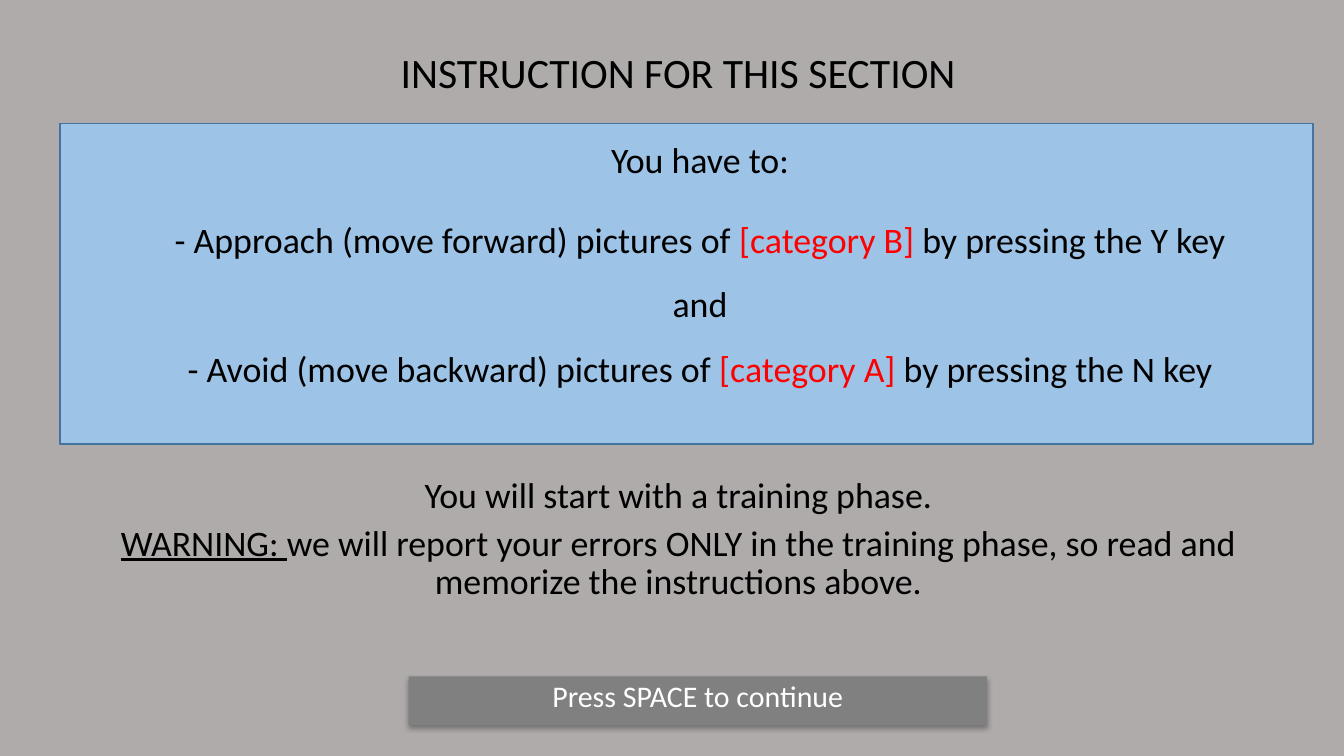
from lxml.etree import SubElement
from pptx import Presentation
from pptx.dml.color import RGBColor
from pptx.enum.shapes import MSO_SHAPE
from pptx.enum.text import MSO_ANCHOR, PP_ALIGN
from pptx.oxml.ns import qn
from pptx.util import Inches, Pt

BLACK = RGBColor(0x00, 0x00, 0x00)
WHITE = RGBColor(0xFF, 0xFF, 0xFF)
RED = RGBColor(0xFF, 0x00, 0x00)
BACKGROUND = RGBColor(0xAF, 0xAB, 0xAB)
PANEL = RGBColor(0x9D, 0xC3, 0xE6)
PANEL_LINE = RGBColor(0x43, 0x73, 0x9E)
BUTTON = RGBColor(0x80, 0x80, 0x80)

HEADING = {"line_spacing": 0.9, "space_before": Pt(9.4)}
RULES = {"line_spacing": 1.5, "space_before": Pt(9.4)}
NOTE = {"line_spacing": 0.9, "space_after": Pt(6)}


def set_format(target, values):
    for name, value in values.items():
        setattr(target, name, value)


def add_run(p, text, size, color, underline=None):
    r = p.add_run()
    r.text = text
    set_format(r.font, {"name": "Calibri", "size": Pt(size), "underline": underline})
    r.font.color.rgb = color


def write_text(sp, paragraphs, size, color=BLACK):
    tf = sp.text_frame
    set_format(tf, {"word_wrap": True, "vertical_anchor": MSO_ANCHOR.TOP})
    for i, (values, lines) in enumerate(paragraphs):
        p = tf.paragraphs[0] if i == 0 else tf.add_paragraph()
        set_format(p, {"alignment": PP_ALIGN.CENTER, **values})
        for j, line in enumerate(lines):
            if j:
                p.add_line_break()
            for text, changes in line:
                add_run(p, text, size, **{"color": color, **changes})


def add_text(s, box, paragraphs, size):
    sp = s.shapes.add_textbox(*map(Inches, box))
    write_text(sp, paragraphs, size)


def add_rect(s, box, fill, line=None):
    sp = s.shapes.add_shape(MSO_SHAPE.RECTANGLE, *map(Inches, box))
    sp.shadow.inherit = False
    sp.fill.solid()
    sp.fill.fore_color.rgb = fill
    if line is None:
        sp.line.fill.background()
    else:
        sp.line.color.rgb = line
        sp.line.width = Pt(1)
    return sp


def add_shadow(sp, blur, distance, opacity):
    effects = sp._element.spPr.find(qn("a:effectLst"))
    shadow = SubElement(effects, qn("a:outerShdw"), blurRad=str(Pt(blur)),
                        dist=str(Pt(distance)), dir="5400000", rotWithShape="0")
    color = SubElement(shadow, qn("a:srgbClr"), val=str(BLACK))
    SubElement(color, qn("a:alpha"), val=str(opacity * 1000))


def rule(action, category, key):
    return [(f"- {action} pictures of ", {}), (f"[category {category}] ", {"color": RED}),
            (f"by pressing the {key} key", {})]


def main():
    prs = Presentation()
    prs.slide_width, prs.slide_height = Inches(12.5), Inches(7.03)
    s = prs.slides.add_slide(prs.slide_layouts[6])
    s.background.fill.solid()
    s.background.fill.fore_color.rgb = BACKGROUND

    add_rect(s, (0.56, 1.15, 11.65, 2.98), PANEL, PANEL_LINE)
    add_text(s, (3.37, 0.44, 5.87, 0.45),
             [(HEADING, [[("INSTRUCTION FOR THIS SECTION", {})]])], 28)
    add_text(s, (0.82, 1.28, 11.38, 2.72), [
        (HEADING, [[("You have to:", {})]]),
        (RULES, [rule("Approach (move forward)", "B", "Y"),
                 [("and", {})],
                 rule("Avoid (move backward)", "A", "N")]),
    ], 24)
    add_text(s, (0.73, 4.39, 11.16, 1.39), [
        (NOTE, [[("You will start with a training phase.", {})]]),
        (NOTE, [[("WARNING: ", {"underline": True}),
                 ("we will report your errors ONLY in the training phase, "
                  "so read and memorize the instructions above.", {})]]),
    ], 24)
    button = add_rect(s, (3.8, 6.29, 5.38, 0.45), BUTTON)
    add_shadow(button, 3.5, 2.2, 32)
    write_text(button, [(HEADING, [[("Press SPACE to continue", {})]])], 20, WHITE)

    prs.save("out.pptx")


if __name__ == "__main__":
    main()
